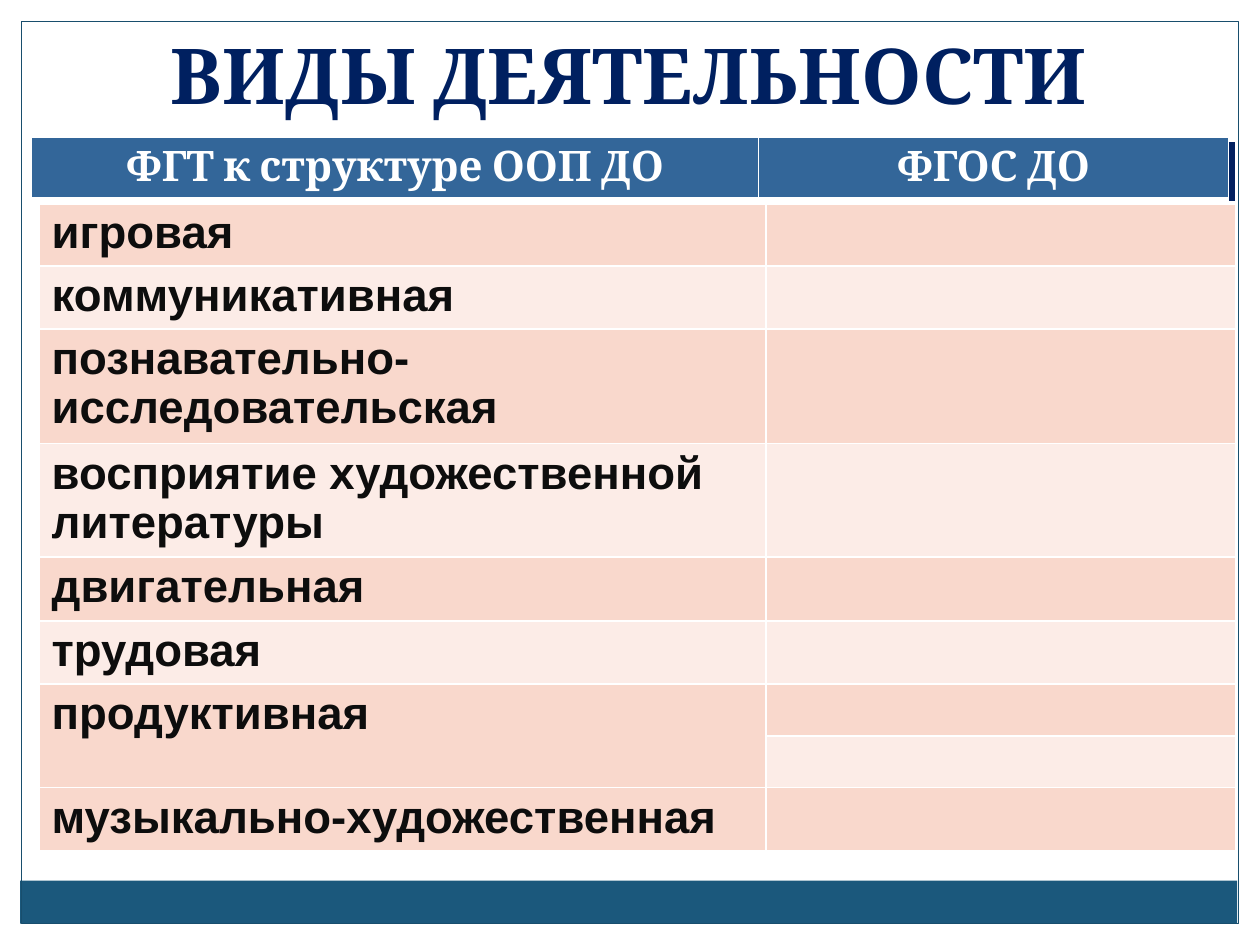
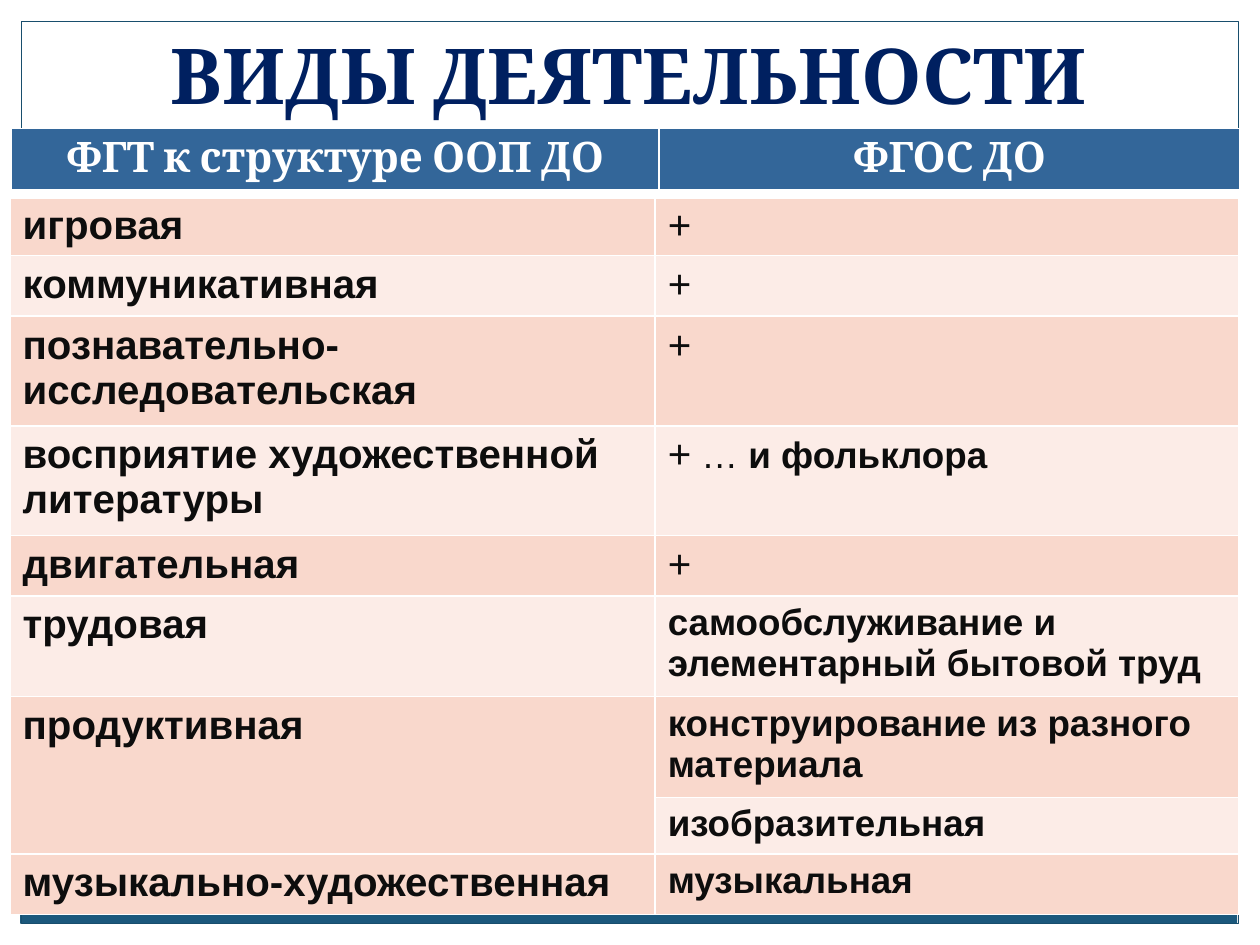
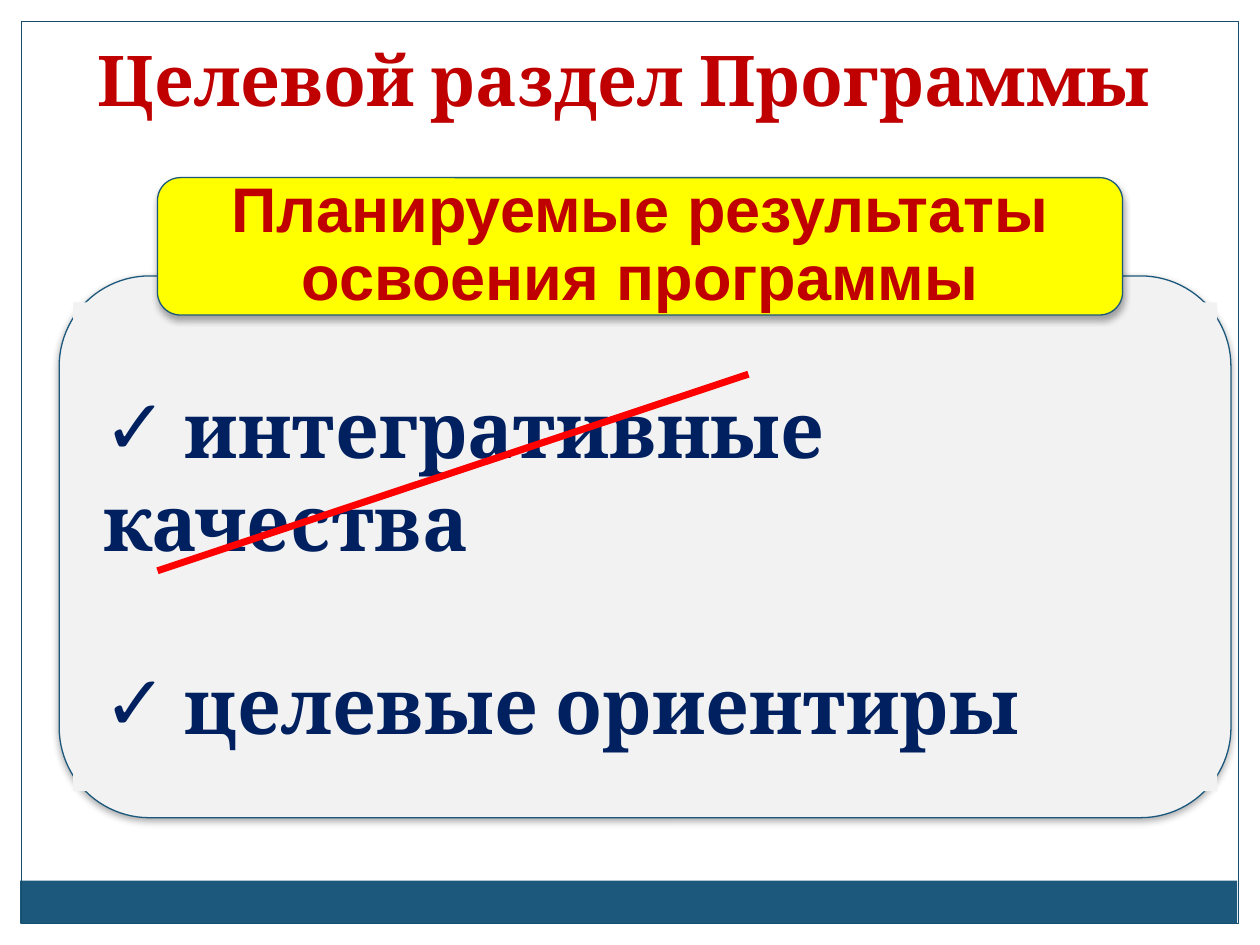
from dataclasses import dataclass
from typing import NamedTuple

from lxml import etree
from pptx import Presentation
from pptx.dml.color import RGBColor
from pptx.enum.shapes import MSO_CONNECTOR, MSO_SHAPE
from pptx.enum.text import MSO_ANCHOR, MSO_AUTO_SIZE, PP_ALIGN
from pptx.oxml.ns import qn
from pptx.util import Inches, Pt

RECT, ROUNDED = MSO_SHAPE.RECTANGLE, MSO_SHAPE.ROUNDED_RECTANGLE
STRAIGHT = MSO_CONNECTOR.STRAIGHT
TOP, MIDDLE, BOTTOM = MSO_ANCHOR.TOP, MSO_ANCHOR.MIDDLE, MSO_ANCHOR.BOTTOM
LEFT, CENTER = PP_ALIGN.LEFT, PP_ALIGN.CENTER
NO_FIT = MSO_AUTO_SIZE.NONE
TITLE_AND_BODY, TITLE_ONLY = 1, 5
COLUMNS = 100  # square grid: 100 columns by 75 rows


@dataclass(frozen=True)
class Theme:
    serif: str = "Cambria"
    sans: str = "Arial"
    white: str = "FFFFFF"
    ink: str = "0D0D0D"
    navy: str = "002060"
    orange: str = "F07F09"
    header: str = "336699"
    bands: tuple = ("F9D8CC", "FCECE7")
    teal: str = "1B587C"
    frame: str = "184E6D"
    panel: str = "F2F2F2"
    red: str = "C00000"
    strike: str = "FF0000"
    yellow: str = "FFFF00"
    big: int = 44
    title: int = 40
    callout: int = 36
    table_large: int = 26
    table_header: int = 24
    table_medium: int = 23
    table_small: int = 21


T = Theme()


class Run(NamedTuple):
    text: str
    size: int
    bold: bool = True
    color: str = T.ink
    font: str = T.sans


def rgb(value):
    return RGBColor.from_string(value)


def write(p, runs, align=LEFT, spacing=None):
    p.alignment = align
    if spacing:
        p.line_spacing = spacing
    for run in runs:
        r = p.add_run()
        r.text = run.text
        r.font.size = Pt(run.size)
        r.font.bold = run.bold
        r.font.name = run.font
        r.font.color.rgb = rgb(run.color)


def check_bullet(p):
    pPr = p._p.get_or_add_pPr()
    pPr.set("marL", "0")
    pPr.set("indent", "0")
    etree.SubElement(pPr, qn("a:buFont"), typeface=T.sans)
    etree.SubElement(pPr, qn("a:buChar"), char="✓")


def style_cell(cell, fill, bottom):
    """Fill a cell and give it white borders; bottom is a width in points."""
    tcPr = cell._tc.get_or_add_tcPr()
    for side, width in (("L", 1), ("R", 1), ("T", 1), ("B", bottom)):
        ln = etree.SubElement(tcPr, qn(f"a:ln{side}"), w=str(Pt(width)))
        solid = etree.SubElement(ln, qn("a:solidFill"))
        etree.SubElement(solid, qn("a:srgbClr"), val=T.white)
    cell.fill.solid()
    cell.fill.fore_color.rgb = rgb(fill)


class Deck:
    def __init__(self):
        self.prs = Presentation()
        self.prs.slide_width, self.prs.slide_height = Inches(10), Inches(7.5)
        self.unit = self.prs.slide_width / COLUMNS
        self.s = None

    def grid(self, *lengths):
        return [round(n * self.unit) for n in lengths]

    def new_slide(self, layout):
        self.s = self.prs.slides.add_slide(self.prs.slide_layouts[layout])

    def shape(self, kind, at, fill=None, line=None, shadow=False):
        sp = self.s.shapes.add_shape(kind, *self.grid(*at))
        sp.shadow.inherit = False
        if fill:
            sp.fill.solid()
            sp.fill.fore_color.rgb = rgb(fill)
        else:
            sp.fill.background()
        if line:
            sp.line.color.rgb = rgb(line)
            sp.line.width = Pt(0.75)
        else:
            sp.line.fill.background()
        if shadow:
            effects = sp._element.spPr.find(qn("a:effectLst"))
            outer = etree.SubElement(effects, qn("a:outerShdw"), blurRad=str(Pt(4)),
                                     dist=str(Pt(2)), dir="5400000", rotWithShape="0")
            color = etree.SubElement(outer, qn("a:srgbClr"), val="000000")
            etree.SubElement(color, qn("a:alpha"), val="35000")
        return sp

    def frame(self):
        """Draw the border and footer band and hand them to the master."""
        parts = [
            self.shape(RECT, (0, 0, 100, 1.7), T.white),
            self.shape(RECT, (98.3, 0, 1.7, 75), T.white),
            self.shape(RECT, (0, 0, 1.7, 75), T.white),
            self.shape(RECT, (1.6, 69.9, 96.6, 3.4), T.teal),
            self.shape(RECT, (1.7, 1.7, 96.6, 71.6), line=T.frame),
        ]
        tree = self.prs.slide_master.shapes.element
        for i, sp in enumerate(parts, start=2):
            tree.insert(i, sp.element)

    def placeholder(self, sp, at, anchor):
        """Move a placeholder to the front and to its place on the grid."""
        sp.left, sp.top, sp.width, sp.height = self.grid(*at)
        self.s.shapes.element.append(sp.element)
        tf = sp.text_frame
        tf.word_wrap = True
        tf.auto_size = NO_FIT
        tf.vertical_anchor = anchor
        return tf

    def title(self, text, at, size, color, anchor):
        tf = self.placeholder(self.s.shapes.title, at, anchor)
        write(tf.paragraphs[0], [Run(text, size, True, color, T.serif)], CENTER)

    def check_list(self, items, at):
        sp = self.s.placeholders[1]
        tf = self.placeholder(sp, at, TOP)
        sp.fill.solid()
        sp.fill.fore_color.rgb = rgb(T.panel)
        tf.margin_left, tf.margin_top, tf.margin_right, tf.margin_bottom = self.grid(2.4, 6.3, 4, 0)
        for i, item in enumerate(items):
            p = tf.add_paragraph() if i else tf.paragraphs[0]
            p.space_before = Pt(52 if i else 0)
            write(p, [Run(item, T.big, True, T.navy, T.serif)])
            check_bullet(p)

    def callout(self, text, at):
        tf = self.shape(ROUNDED, at, T.yellow, T.teal, shadow=True).text_frame
        tf.word_wrap = True
        tf.vertical_anchor = MIDDLE
        tf.margin_top = tf.margin_bottom = 0
        write(tf.paragraphs[0], [Run(text, T.callout, True, T.red)], CENTER, 0.9)

    def strike(self, start, end):
        line = self.s.shapes.add_connector(STRAIGHT, *self.grid(*start, *end))
        line.line.color.rgb = rgb(T.strike)
        line.line.width = Pt(4)
        etree.SubElement(line._element.spPr, qn("a:effectLst"))

    def table(self, at, columns, heights, rows, header_fill, align=LEFT, spacing=None):
        """Rows hold lists of runs; the first row has the header fill and a thick rule."""
        left, top = at
        gf = self.s.shapes.add_table(len(rows), len(columns), *self.grid(
            left, top, sum(columns), sum(heights)))
        table = gf.table
        table.first_row = table.horz_banding = False
        for col, width in zip(table.columns, self.grid(*columns)):
            col.width = width
        for i, (row, height) in enumerate(zip(rows, self.grid(*heights))):
            table.rows[i].height = height
            fill = T.bands[(i - 1) % 2] if i else header_fill
            for j, runs in enumerate(row):
                cell = table.cell(i, j)
                style_cell(cell, fill, 1 if i else 3)
                if runs:
                    write(cell.text_frame.paragraphs[0], runs, align, spacing)
        return table

    def activities(self, at, columns, heights, size, answers, back_fill, spacing=None):
        names = [[Run(name, size)] if name else [] for name in ACTIVITIES]
        rows = [([], [])] + list(zip(names, answers))
        table = self.table(at, columns, heights, rows, back_fill, spacing=spacing)
        split = ACTIVITIES.index("продуктивная") + 1
        table.cell(split, 0).merge(table.cell(split + 1, 0))

    def activities_header(self, at, columns, height):
        row = [[Run(text, T.table_header, True, T.white, T.serif)]
               for text in ("ФГТ к структуре ООП ДО", "ФГОС ДО")]
        self.table(at, columns, [height], [row], T.header, CENTER)

    def activities_title(self):
        self.title("ВИДЫ ДЕЯТЕЛЬНОСТИ", (5.8, 1.7, 88.3, 8.4), T.big, T.navy, TOP)


# The empty name is the second half of the split row.
ACTIVITIES = ["игровая", "коммуникативная", "познавательно-исследовательская",
              "восприятие художественной литературы", "двигательная", "трудовая",
              "продуктивная", "", "музыкально-художественная"]
PLUS = Run("+", T.table_medium, False)


def small(text, bold=True):
    return Run(text, T.table_small, bold)


ANSWERS = [[PLUS], [PLUS], [PLUS],
           [PLUS, small(" … ", False), small("и фольклора")],
           [PLUS],
           [small("самообслуживание и элементарный бытовой труд")],
           [small("конструирование из разного материала")],
           [small("изобразительная")],
           [small("музыкальная")]]


def main():
    deck = Deck()

    deck.new_slide(TITLE_ONLY)
    deck.frame()
    deck.activities((3.1, 11.2), (57.7, 37.3),
                    (4.9, 5, 5, 9.1, 9, 5.1, 5, 4.1, 4.1, 5),
                    T.table_large, [[]] * len(ACTIVITIES), T.navy, spacing=0.97)
    deck.activities_header((2.5, 10.9), (57.7, 37.3), 4.9)
    deck.activities_title()

    deck.new_slide(TITLE_ONLY)
    deck.activities((0.8, 10.5), (51.2, 46.3),
                    (5.1, 4.7, 4.8, 8.7, 8.7, 4.8, 8, 8, 4.5, 4.8),
                    T.table_medium, ANSWERS, T.orange)
    deck.activities_header((0.9, 10.2), (51.4, 46.1), 5)
    deck.activities_title()

    deck.new_slide(TITLE_AND_BODY)
    deck.shape(ROUNDED, (4.7, 21.9, 93, 43), T.panel, T.teal, shadow=True)
    deck.check_list([" интегративные качества", " целевые ориентиры"], (5.8, 24, 90.8, 38.8))
    deck.strike((12.5, 45.3), (59.4, 29.7))
    deck.callout("Планируемые результаты освоения программы", (12.5, 14.1, 76.6, 10.9))
    deck.title("Целевой раздел Программы", (4.5, -1.6, 90, 11.7), T.title, T.red, BOTTOM)

    deck.prs.save("out.pptx")


if __name__ == "__main__":
    main()
